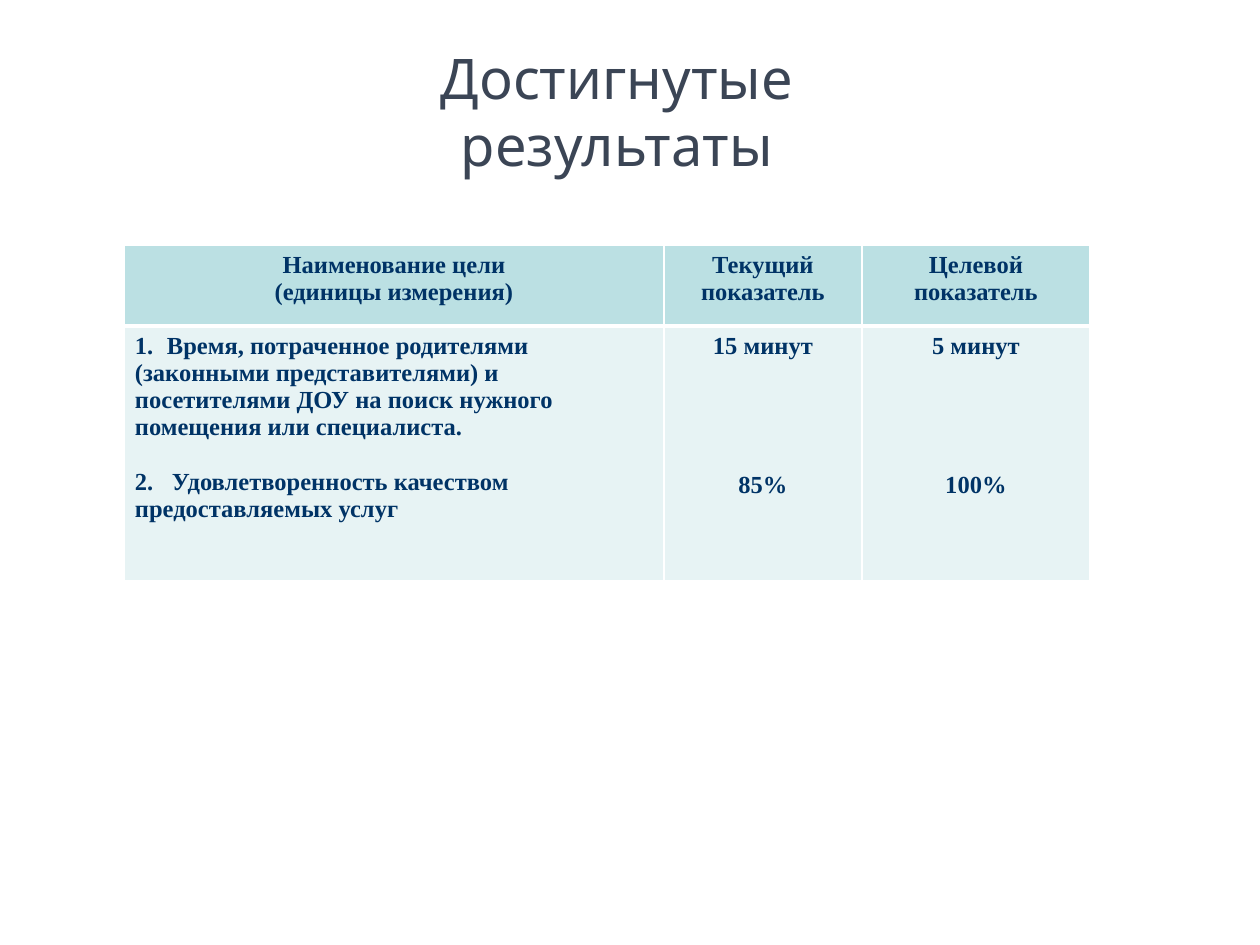
from lxml.etree import SubElement as Sub
from pptx import Presentation
from pptx.dml.color import RGBColor as Rgb
from pptx.enum.text import MSO_ANCHOR as Anchor, PP_ALIGN as Align
from pptx.oxml.ns import qn
from pptx.util import Pt

PX = 914400 / 126
COLORS = {"title": "3B4555", "text": "003366", "head": "BBE0E3",
          "body": "E7F3F4", "rule": "FFFFFF"}
COLS = [540, 198, 228]
ROWS = [81, 255]
HEAD = [["Наименование цели", "(единицы измерения)"],
        ["Текущий показатель"], ["Целевой", "показатель"]]
GOALS = ["Время, потраченное родителями",
         "(законными представителями) и",
         "посетителями ДОУ на поиск нужного помещения или специалиста.",
         "2.\tУдовлетворенность качеством предоставляемых услуг"]
BODY = [GOALS, ["15 минут", "85%"], ["5 минут", "100%"]]
LINE = 16


def px(n):
    return round(n * PX)


def style(para, font, size, color, bold=False):
    para.font.name = font
    para.font.size = Pt(size)
    para.font.bold = bold
    para.font.color.rgb = Rgb.from_string(COLORS[color])


def add_title(slide, text):
    box = slide.shapes.add_textbox(px(283), px(37), px(668), px(81))
    frame = box.text_frame
    frame.word_wrap = True
    frame.vertical_anchor = Anchor.TOP
    para = frame.paragraphs[0]
    para.text = text
    para.alignment = Align.CENTER
    style(para, "League Spartan", 32, "title")


def add_rules(cell, widths):
    props = cell._tc.get_or_add_tcPr()
    for side, width in zip("LRTB", widths):
        line = Sub(props, qn(f"a:ln{side}"), w=str(Pt(width)))
        fill = Sub(line, qn("a:solidFill"))
        Sub(fill, qn("a:srgbClr"), val=COLORS["rule"])


def fill_cell(cell, lines, color, widths, align):
    add_rules(cell, widths)
    cell.fill.solid()
    cell.fill.fore_color.rgb = Rgb.from_string(COLORS[color])
    cell.margin_left = cell.margin_right = px(11)
    frame = cell.text_frame
    for i, text in enumerate(lines):
        para = frame.add_paragraph() if i else frame.paragraphs[0]
        para.text = text
        para.alignment = align
    return frame.paragraphs


def number(para):
    props = para._p.get_or_add_pPr()
    props.set("marL", str(px(32)))
    props.set("indent", str(-px(32)))
    Sub(props, qn("a:buFont"), typeface="+mj-lt")
    Sub(props, qn("a:buAutoNum"), type="arabicPeriod")


def add_tab(para, pos):
    tabs = Sub(para._p.get_or_add_pPr(), qn("a:tabLst"))
    Sub(tabs, qn("a:tab"), pos=str(px(pos)), algn="l")


def add_goals(slide):
    frame = slide.shapes.add_table(2, 3, px(124), px(245),
                                   px(sum(COLS)), px(sum(ROWS)))
    table = frame.table
    for col, width in zip(table.columns, COLS):
        col.width = px(width)
    for row, height in zip(table.rows, ROWS):
        row.height = px(height)
    for c, (head, body) in enumerate(zip(HEAD, BODY)):
        top = fill_cell(table.cell(0, c), head, "head", (1, 1, 1, 3),
                        Align.CENTER)
        low = fill_cell(table.cell(1, c), body, "body", (1, 1, 3, 1),
                        Align.CENTER if c else Align.LEFT)
        low[-1].space_before = Pt(LINE * (4 if c else 1))
        if c == 0:
            number(low[0])
            add_tab(low[-1], 37)
        for para in (*top, *low):
            style(para, "Times New Roman", 14, "text", True)


def main():
    deck = Presentation()
    deck.slide_width, deck.slide_height = px(1260), px(945)
    slide = deck.slides.add_slide(deck.slide_layouts[6])
    add_title(slide, "Достигнутые результаты")
    add_goals(slide)
    deck.save("out.pptx")


if __name__ == "__main__":
    main()
